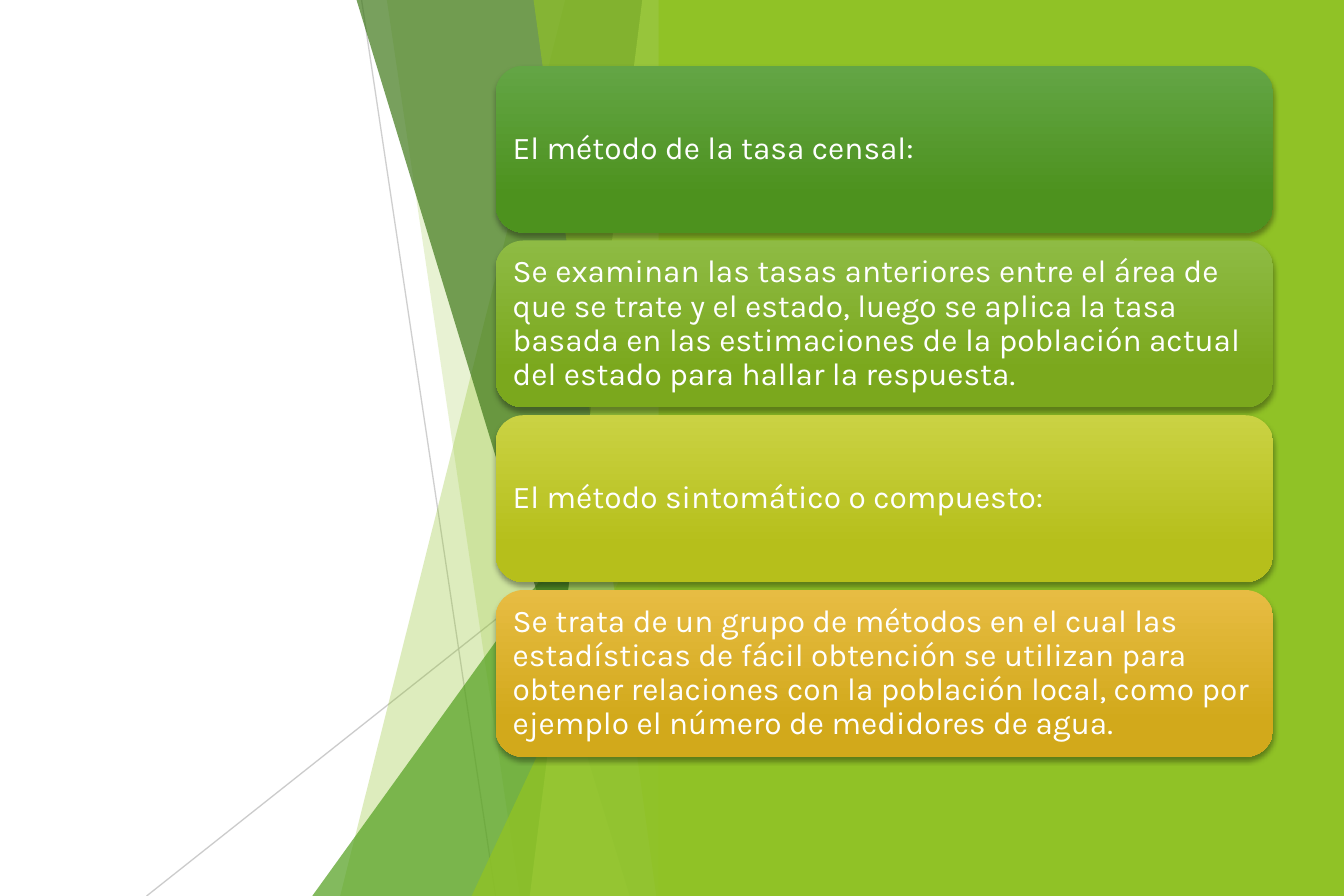
from dataclasses import dataclass

from lxml.etree import SubElement
from pptx import Presentation
from pptx.dml.color import RGBColor
from pptx.enum.shapes import MSO_CONNECTOR, MSO_SHAPE
from pptx.enum.text import MSO_ANCHOR, PP_ALIGN
from pptx.oxml.ns import qn
from pptx.util import Inches, Pt


@dataclass(frozen=True)
class Theme:
    font: str = "Karla"
    size: int = 18
    white: str = "FFFFFF"
    black: str = "000000"
    gray: str = "BFBFBF"
    lime: str = "90C226"
    pale: str = "C0E474"
    green: str = "54A021"
    dark: str = "3F7819"
    cards: tuple = (
        ("63A545", "4D921E"),
        ("8EBB44", "7BA81D"),
        ("CAD243", "B6BF1B"),
        ("E7BC43", "D2A91B"),
    )


theme = Theme()
rgb = RGBColor.from_string


def fade(props, percent):
    """Set the opacity of the first colour in the shape properties."""
    color = next(props.iter(qn("a:srgbClr")))
    SubElement(color, qn("a:alpha"), val=str(percent * 1000))


def paint(shape, color):
    """Give a shape a flat fill without outline or shadow."""
    shape.fill.solid()
    shape.fill.fore_color.rgb = rgb(color)
    shape.line.fill.background()
    shape.shadow.inherit = False


deck = Presentation()
deck.slide_width, deck.slide_height = Inches(10.63), Inches(7.09)
slide = deck.slides.add_slide(deck.slide_layouts[6])
shapes = slide.shapes
floor, edge = 7.09, 5.31

# Thin crossing lines
for x1, y1, x2, alpha in ((2.86, 0, 3.92, 75), (edge, 3.8, 1.16, 80)):
    line = shapes.add_connector(
        MSO_CONNECTOR.STRAIGHT, Inches(x1), Inches(y1), Inches(x2), Inches(floor)
    )
    line.line.color.rgb = rgb(theme.gray)
    line.line.width = Pt(0.75)
    props = line._element.spPr
    fade(props, alpha)
    SubElement(props, qn("a:effectLst"))

# Translucent facets: upper left x, top, lower left x, colour, opacity
facets = (
    (4.47, 0, 2.69, theme.lime, 30),
    (3.06, 0, 4.11, theme.lime, 20),
    (edge, 3.15, 2.47, theme.green, 72),
    (2.82, 0, 4.98, theme.dark, 70),
    (5.08, 0, 4.19, theme.pale, 70),
    (4.22, 0, 5.19, theme.lime, 65),
    (edge, 3.71, 3.73, theme.lime, 80),
)
for upper, top, lower, color, alpha in facets:
    path = shapes.build_freeform(Inches(upper), Inches(top))
    corners = ((edge, top), (edge, floor), (lower, floor))
    path.add_line_segments([(Inches(x), Inches(y)) for x, y in corners])
    facet = path.convert_to_shape()
    paint(facet, color)
    fade(facet._element.spPr, alpha)

# Solid side panel
panel = shapes.add_shape(
    MSO_SHAPE.RECTANGLE, Inches(5.21), 0, Inches(5.42), Inches(floor)
)
paint(panel, theme.lime)

# Stacked method cards
texts = (
    "El método de la tasa censal:",
    "Se examinan las tasas anteriores entre el área de que se trate y el estado, "
    "luego se aplica la tasa basada en las estimaciones de la población actual "
    "del estado para hallar la respuesta.",
    "El método sintomático o compuesto:",
    "Se trata de un grupo de métodos en el cual las estadísticas de fácil "
    "obtención se utilizan para obtener relaciones con la población local, "
    "como por ejemplo el número de medidores de agua.",
)
for row, (text, colors) in enumerate(zip(texts, theme.cards)):
    card = shapes.add_shape(
        MSO_SHAPE.ROUNDED_RECTANGLE,
        Inches(3.92), Inches(0.52 + 1.383 * row), Inches(6.15), Inches(1.32),
    )
    card.line.fill.background()
    card.fill.gradient()
    card.fill.gradient_angle = 270
    for stop, color, place in zip(card.fill.gradient_stops, colors, (0, 0.78)):
        stop.color.rgb = rgb(color)
        stop.position = place

    # Soft shadow below the card
    card.shadow.inherit = False
    effects = card._element.spPr.find(qn("a:effectLst"))
    shadow = SubElement(
        effects, qn("a:outerShdw"),
        blurRad=str(Pt(3)), dist=str(Pt(2)), dir="5400000", rotWithShape="0",
    )
    SubElement(shadow, qn("a:srgbClr"), val=theme.black)
    fade(shadow, 35)

    # Card text
    frame = card.text_frame
    frame.word_wrap = True
    frame.vertical_anchor = MSO_ANCHOR.MIDDLE
    frame.margin_left = frame.margin_right = Inches(0.07)
    frame.margin_top = frame.margin_bottom = Inches(0.07)
    frame.text = text
    para = frame.paragraphs[0]
    para.alignment = PP_ALIGN.LEFT
    para.line_spacing = 0.9
    para.font.name = theme.font
    para.font.size = Pt(theme.size)
    para.font.color.rgb = rgb(theme.white)

deck.save("out.pptx")
